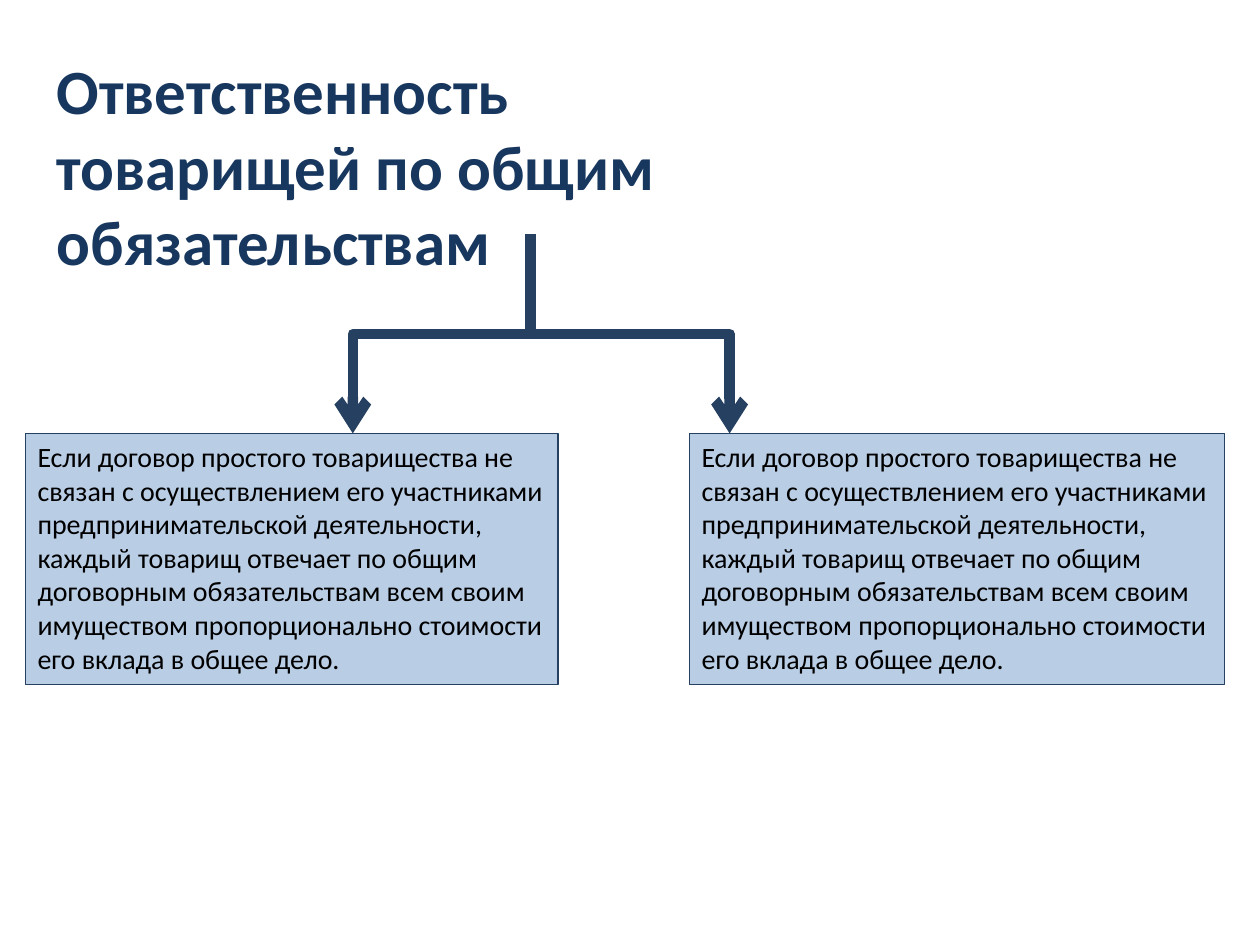
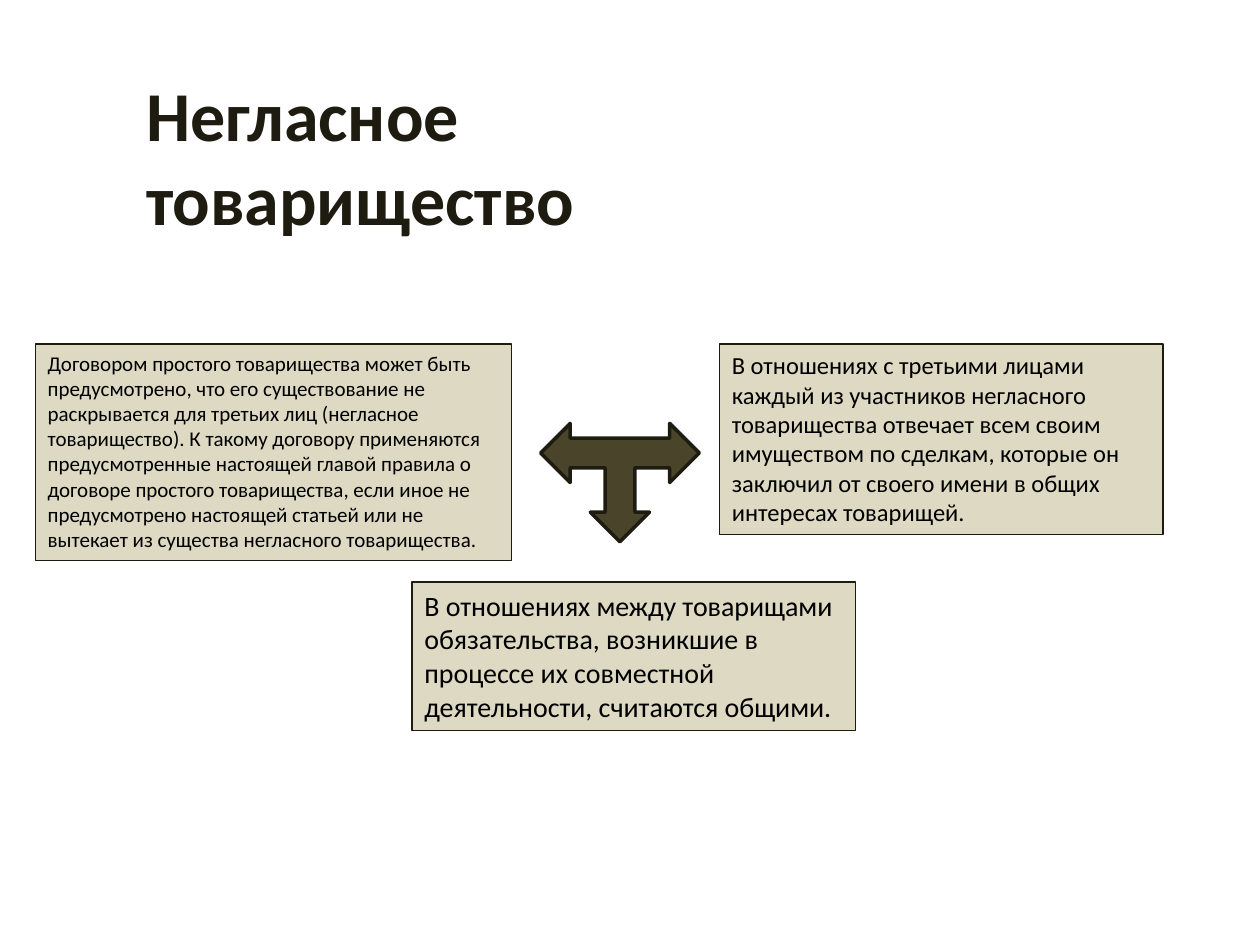
from pptx import Presentation
from pptx import util as u
from pptx.dml.color import RGBColor
from pptx.enum import shapes, text
from pptx.oxml import parse_xml
from pptx.oxml.ns import nsdecls, qn

FONT = "Calibri"
BLUE = {"title": "17375E", "fill": "B9CDE5", "line": "254061"}
SAND = {"title": "1E1C11", "fill": "DDD9C3", "line": "1E1C11", "arrow": "4A452A"}
BLACK = "000000"

LIABILITY = (
    "Если договор простого товарищества не связан с осуществлением его участниками "
    "предпринимательской деятельности, каждый товарищ отвечает по общим договорным "
    "обязательствам всем своим имуществом пропорционально стоимости его вклада в общее дело."
)

# Boxes are (text, size in points, (left, top, width, height))
SLIDES = [
    {
        "title": "Ответственность товарищей по общим обязательствам",
        "title_size": 36,
        "title_at": (0.35, 0.36, 5, 1.92),
        "colors": BLUE,
        "boxes": [
            (LIABILITY, 16, (0.2, 3.44, 4.23, 1.99)),
            (LIABILITY, 16, (5.47, 3.44, 4.25, 1.99)),
        ],
        "fork": {"start": (4.21, 1.86), "ends": [(5.79, 3.44), (2.8, 3.44)]},
    },
    {
        "title": "Негласное товарищество",
        "title_size": 40,
        "title_at": (1.06, 0.52, 5.2, 1.45),
        "colors": SAND,
        "boxes": [
            ("Договором простого товарищества может быть предусмотрено, что его существование "
             "не раскрывается для третьих лиц (негласное товарищество). К такому договору "
             "применяются предусмотренные настоящей главой правила о договоре простого "
             "товарищества, если иное не предусмотрено настоящей статьей или не вытекает "
             "из существа негласного товарищества.", 12, (0.28, 2.73, 3.78, 1.72)),
            ("В отношениях с третьими лицами каждый из участников негласного товарищества "
             "отвечает всем своим имуществом по сделкам, которые он заключил от своего имени "
             "в общих интересах товарищей.", 14, (5.71, 2.73, 3.52, 1.51)),
            ("В отношениях между товарищами обязательства, возникшие в процессе их совместной "
             "деятельности, считаются общими.", 16, (3.27, 4.62, 3.52, 1.18)),
        ],
        "three_way_arrow": (4.29, 3.36, 1.26, 0.94),
    },
]


def rgb(color):
    return RGBColor.from_string(color)


def inches(values):
    return [u.Inches(v) for v in values]


def set_line(sp, color, width):
    sp.line.color.rgb = rgb(color)
    sp.line.width = u.Pt(width)


def write(sp, words, size, color, bold=False):
    tf = sp.text_frame
    tf.word_wrap = True
    tf.auto_size = text.MSO_AUTO_SIZE.SHAPE_TO_FIT_TEXT
    tf.vertical_anchor = text.MSO_ANCHOR.TOP
    p = tf.paragraphs[0]
    p.text = words
    p.alignment = text.PP_ALIGN.LEFT
    p.font.name, p.font.size, p.font.bold = FONT, u.Pt(size), bold
    p.font.color.rgb = rgb(color)


def add_title(s, words, size, at, color):
    sp = s.shapes.title
    sp.left, sp.top, sp.width, sp.height = inches(at)
    write(sp, words, size, color, bold=True)


def add_box(s, words, size, at, colors):
    sp = s.shapes.add_textbox(*inches(at))
    sp.fill.solid()
    sp.fill.fore_color.rgb = rgb(colors["fill"])
    set_line(sp, colors["line"], 0.75)
    write(sp, words, size, BLACK)


def add_down_elbow(s, start, end, color):
    """Draw an elbow arrow that leaves downwards, as a quarter-turned connector."""
    (x1, y1), (x2, y2) = start, end
    width, height = y2 - y1, abs(x2 - x1)
    left, top = (x1 + x2 - width) / 2, (y1 + y2 - height) / 2
    c = s.shapes.add_connector(
        shapes.MSO_CONNECTOR.ELBOW, *inches((left, top, left + width, top + height)))
    xfrm = c.element.spPr.find(qn("a:xfrm"))
    xfrm.set("rot", str((270 if x2 > x1 else 90) * 60000))
    if x2 > x1:
        xfrm.set("flipH", "1")
    set_line(c, color, 6)
    c.line._get_or_add_ln().append(parse_xml(f'<a:tailEnd {nsdecls("a")} type="arrow"/>'))
    c.element.spPr.append(parse_xml(f'<a:effectLst {nsdecls("a")}/>'))


def add_three_way_arrow(s, at, colors):
    sp = s.shapes.add_shape(shapes.MSO_SHAPE.LEFT_RIGHT_UP_ARROW, *inches(at))
    sp.rotation = 180
    sp.shadow.inherit = False
    sp.fill.solid()
    sp.fill.fore_color.rgb = rgb(colors["arrow"])
    set_line(sp, colors["line"], 2)


def main():
    prs = Presentation()
    prs.slide_width, prs.slide_height = inches((10, 7.5))
    title_only = prs.slide_layouts[5]
    for data in SLIDES:
        s = prs.slides.add_slide(title_only)
        colors = data["colors"]
        add_title(s, data["title"], data["title_size"], data["title_at"], colors["title"])
        for words, size, at in data["boxes"]:
            add_box(s, words, size, at, colors)
        if "fork" in data:
            for end in data["fork"]["ends"]:
                add_down_elbow(s, data["fork"]["start"], end, colors["line"])
        if "three_way_arrow" in data:
            add_three_way_arrow(s, data["three_way_arrow"], colors)
    prs.save("out.pptx")


if __name__ == "__main__":
    main()
